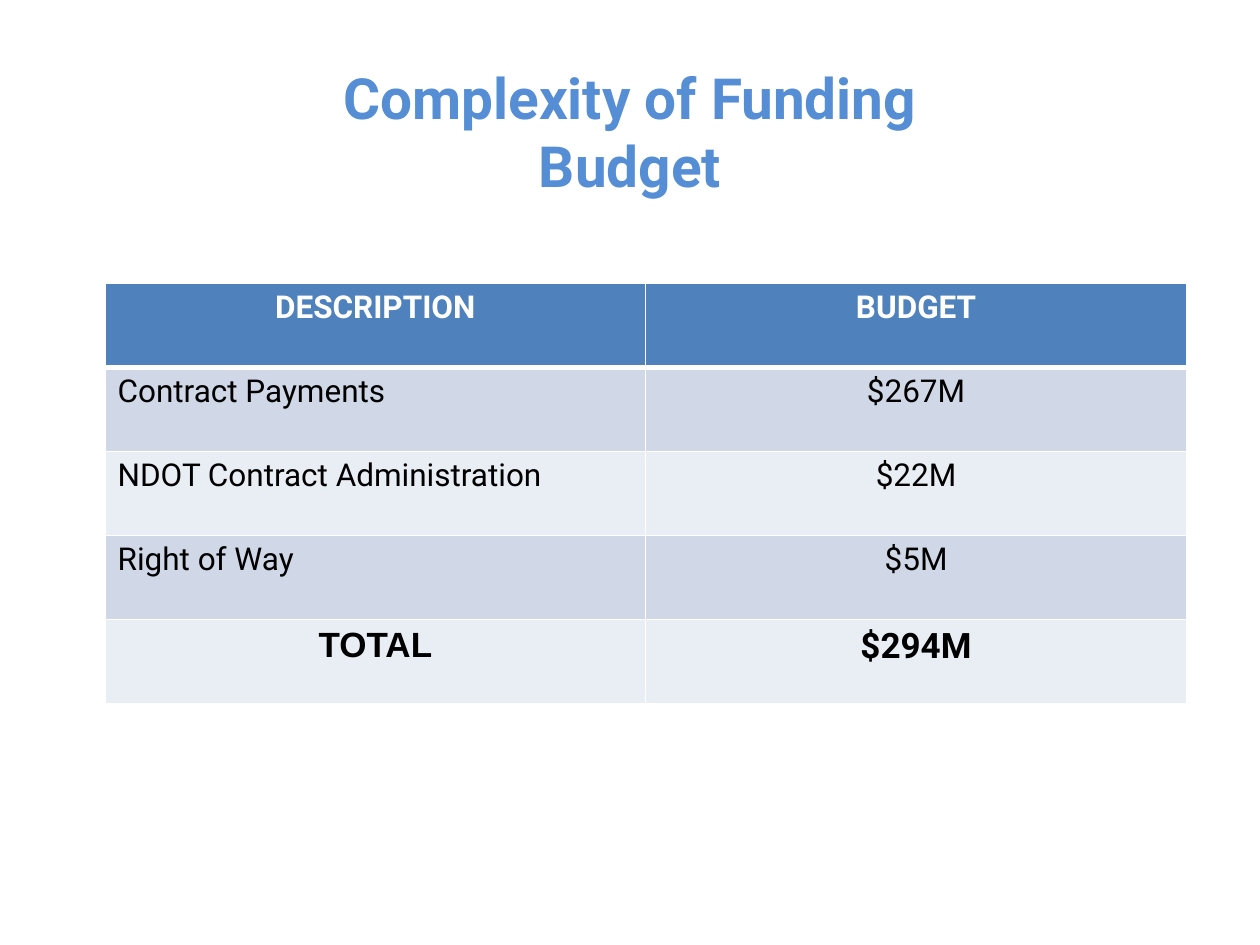
from dataclasses import dataclass

from lxml.etree import SubElement
from pptx import Presentation
from pptx.dml.color import RGBColor
from pptx.enum.text import MSO_ANCHOR, PP_ALIGN
from pptx.oxml.ns import qn
from pptx.util import Pt


@dataclass(frozen=True)
class Theme:
    title: str = "558ED5"
    header: str = "4F81BD"
    bands: tuple = ("D0D8E8", "E9EDF4")
    white: str = "FFFFFF"
    black: str = "000000"
    font: str = "Roboto"
    total_font: str = "Arial"
    title_size: float = 32.4
    body_size: float = 18
    total_size: float = 20


THEME = Theme()

BUDGET_ROWS = [
    ("DESCRIPTION", "BUDGET"),
    ("Contract Payments", "$267M"),
    ("NDOT Contract Administration", "$22M"),
    ("Right of Way", "$5M"),
    ("TOTAL", "$294M"),
]


def write_text(text_frame, text, *, size=THEME.body_size, color=THEME.black,
               font=THEME.font, bold=False, align=PP_ALIGN.CENTER):
    """Fill the first paragraph; each newline becomes a line break."""
    paragraph = text_frame.paragraphs[0]
    paragraph.alignment = align
    for index, line in enumerate(text.split("\n")):
        if index:
            paragraph.add_line_break()
        run = paragraph.add_run()
        run.text = line
        run.font.name = font
        run.font.size = Pt(size)
        run.font.bold = bold
        run.font.color.rgb = RGBColor.from_string(color)


def set_borders(cell, widths):
    """Draw white borders; widths maps L, R, T and B to points."""
    properties = cell._tc.get_or_add_tcPr()
    for position, (side, width) in enumerate(widths.items()):
        line = properties.makeelement(qn(f"a:ln{side}"), {"w": str(Pt(width))})
        fill = SubElement(line, qn("a:solidFill"))
        SubElement(fill, qn("a:srgbClr"), val=THEME.white)
        properties.insert(position, line)


def add_title(slide, text):
    shape = slide.shapes.add_textbox(Pt(36), Pt(30), Pt(648), Pt(90))
    shape.text_frame.word_wrap = True
    shape.text_frame.vertical_anchor = MSO_ANCHOR.MIDDLE
    write_text(shape.text_frame, text, size=THEME.title_size,
               color=THEME.title, bold=True)


def format_cell(cell, text, row, column, last_row):
    is_header, is_total = row == 0, row == last_row
    cell.fill.solid()
    fill = THEME.header if is_header else THEME.bands[(row - 1) % 2]
    cell.fill.fore_color.rgb = RGBColor.from_string(fill)
    set_borders(cell, {"L": 1, "R": 1, "T": 3 if row == 1 else 1,
                       "B": 3 if is_header else 1})
    is_label = column == 0 and not (is_header or is_total)
    write_text(
        cell.text_frame, text,
        size=THEME.total_size if is_total else THEME.body_size,
        color=THEME.white if is_header else THEME.black,
        font=THEME.total_font if is_total and column == 0 else THEME.font,
        bold=is_header or is_total,
        align=PP_ALIGN.LEFT if is_label else PP_ALIGN.CENTER,
    )


def add_budget_table(slide, rows):
    table = slide.shapes.add_table(len(rows), len(rows[0]), Pt(60), Pt(162),
                                   Pt(618), Pt(240)).table
    for row, texts in enumerate(rows):
        for column, text in enumerate(texts):
            format_cell(table.cell(row, column), text, row, column, len(rows) - 1)


def main():
    presentation = Presentation()
    presentation.slide_width = Pt(720)
    presentation.slide_height = Pt(540)
    slide = presentation.slides.add_slide(presentation.slide_layouts[6])
    add_budget_table(slide, BUDGET_ROWS)
    add_title(slide, "Complexity of Funding\nBudget")
    presentation.save("out.pptx")


if __name__ == "__main__":
    main()
